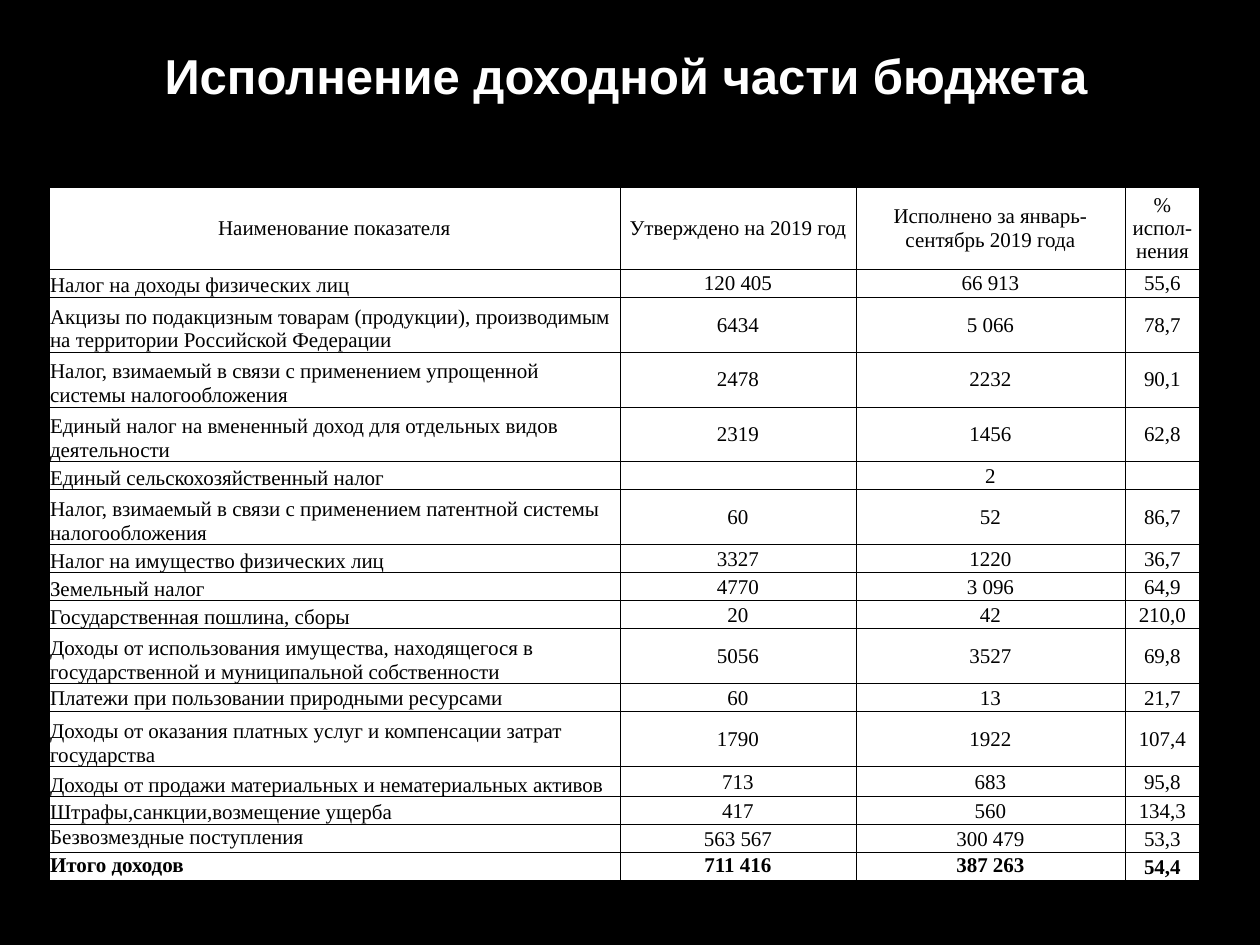
"""Build a slide with a table of budget revenue."""
from lxml import etree
from pptx import Presentation
from pptx.dml.color import RGBColor
from pptx.enum.text import MSO_ANCHOR, PP_ALIGN
from pptx.oxml.ns import qn
from pptx.util import Emu, Pt

SCALE = 914400 / 126
BLACK = RGBColor(0, 0, 0)
WHITE = RGBColor(255, 255, 255)
TOP, MIDDLE, BOTTOM = MSO_ANCHOR.TOP, MSO_ANCHOR.MIDDLE, MSO_ANCHOR.BOTTOM
LEFT, CENTER, JUSTIFY = PP_ALIGN.LEFT, PP_ALIGN.CENTER, PP_ALIGN.JUSTIFY
SERIF, SANS = "Times New Roman", "Arial"
SIZE = 12
ONE, TWO, HEAD = 28, 55, 82
WIDTHS = [571, 236, 269, 75]
HEADER = ["Наименование показателя", "Утверждено на 2019 год",
          "Исполнено за январь-сентябрь 2019 года", "% испол-нения"]
TAXES = [
    (ONE, "Налог на доходы физических лиц", "120 405", "66 913", "55,6"),
    (TWO, "Акцизы по подакцизным товарам (продукции), производимым "
     "на территории Российской Федерации", "6434", "5 066", "78,7"),
    (TWO, "Налог, взимаемый в связи с применением упрощенной "
     "системы налогообложения", "2478", "2232", "90,1"),
    (TWO, "Единый налог на вмененный доход для отдельных видов "
     "деятельности", "2319", "1456", "62,8"),
    (ONE, "Единый сельскохозяйственный налог", "", "2", ""),
    (TWO, "Налог, взимаемый в связи с применением патентной системы "
     "налогообложения", "60", "52", "86,7"),
    (ONE, "Налог на имущество физических лиц", "3327", "1220", "36,7"),
    (ONE, "Земельный налог", "4770", "3 096", "64,9"),
    (ONE, "Государственная пошлина, сборы", "20", "42", "210,0"),
    (TWO, "Доходы от использования имущества, находящегося в "
     "государственной и муниципальной собственности", "5056", "3527", "69,8"),
]
FEES = [
    (TWO, "Доходы от оказания платных услуг и компенсации затрат "
     "государства", "1790", "1922", "107,4"),
    (30, "Доходы от продажи материальных и нематериальных активов",
     "713", "683", "95,8"),
    (ONE, "Штрафы,санкции,возмещение ущерба", "417", "560", "134,3"),
]
NATURE = (ONE, "Платежи при пользовании природными ресурсами",
          "60", "13", "21,7")
GRANTS = (ONE, "Безвозмездные поступления", "563 567", "300 479", "53,3")
TOTAL = (ONE, "Итого доходов", "711 416", "387 263", "54,4")


def px(count):
    """Turn pixels into EMU."""
    return Emu(round(count * SCALE))


def add_run(para, text, face, size, color, bold=False):
    """Add a styled run to a paragraph."""
    run = para.add_run()
    run.text = text
    font = run.font
    font.name, font.size, font.bold = face, Pt(size), bold
    font.color.rgb = color


def add_title(slide, text):
    """Add the centred heading."""
    box = slide.shapes.add_textbox(px(59), px(29), px(1134), px(91))
    frame = box.text_frame
    frame.word_wrap = True
    frame.vertical_anchor = MIDDLE
    para = frame.paragraphs[0]
    para.alignment = CENTER
    add_run(para, text, SANS, 28, WHITE, True)


def add_borders(cell):
    """Draw thin lines on all four sides of a cell."""
    props = cell._tc.get_or_add_tcPr()
    for spot, side in enumerate(("a:lnL", "a:lnR", "a:lnT", "a:lnB")):
        line = etree.Element(qn(side), w=str(Pt(0.5)))
        fill = etree.SubElement(line, qn("a:solidFill"))
        etree.SubElement(fill, qn("a:srgbClr"), val=str(BLACK))
        props.insert(spot, line)


def fill_cell(cell, text, align, anchor, bold=False):
    """Style one cell and write its text."""
    cell.fill.solid()
    cell.fill.fore_color.rgb = WHITE
    cell.margin_left = cell.margin_right = cell.margin_top = px(1)
    cell.margin_bottom = 0
    cell.vertical_anchor = anchor
    add_borders(cell)
    para = cell.text_frame.paragraphs[0]
    para.alignment = align
    if text:
        add_run(para, text, SERIF, SIZE, BLACK, bold)
    else:
        etree.SubElement(para._p, qn("a:endParaRPr"), sz=str(SIZE * 100))


def fill_row(table, index, data, align, anchors, bold=False):
    """Set a row's height and fill its cells."""
    height, *texts = data
    table.rows[index].height = px(height)
    aligns = [align] + [CENTER] * 3
    for col, (text, side, anchor) in enumerate(zip(texts, aligns, anchors)):
        fill_cell(table.cell(index, col), text, side, anchor, bold)


def add_budget(slide):
    """Add the revenue table."""
    mid, low = [MIDDLE] * 4, [BOTTOM] + [MIDDLE] * 3
    rows = [((HEAD, *HEADER), CENTER, mid)]
    rows += [(data, LEFT, low) for data in TAXES]
    rows.append((NATURE, LEFT, mid))
    rows += [(data, LEFT, low) for data in FEES]
    rows.append((GRANTS, JUSTIFY, [TOP] + [MIDDLE] * 3))
    rows.append((TOTAL, JUSTIFY, [TOP] * 3 + [MIDDLE], True))
    high = sum(row[0][0] for row in rows)
    table = slide.shapes.add_table(len(rows), len(WIDTHS), px(49), px(187),
                                   px(sum(WIDTHS)), px(high)).table
    table.first_row = table.horz_banding = False
    for col, width in zip(table.columns, WIDTHS):
        col.width = px(width)
    for index, row in enumerate(rows):
        fill_row(table, index, *row)


def main():
    """Build and save the slide."""
    deck = Presentation()
    deck.slide_width, deck.slide_height = px(1260), px(945)
    slide = deck.slides.add_slide(deck.slide_layouts[6])
    back = slide.background.fill
    back.solid()
    back.fore_color.rgb = BLACK
    add_title(slide, "Исполнение доходной части бюджета")
    add_budget(slide)
    deck.save("out.pptx")


if __name__ == "__main__":
    main()
